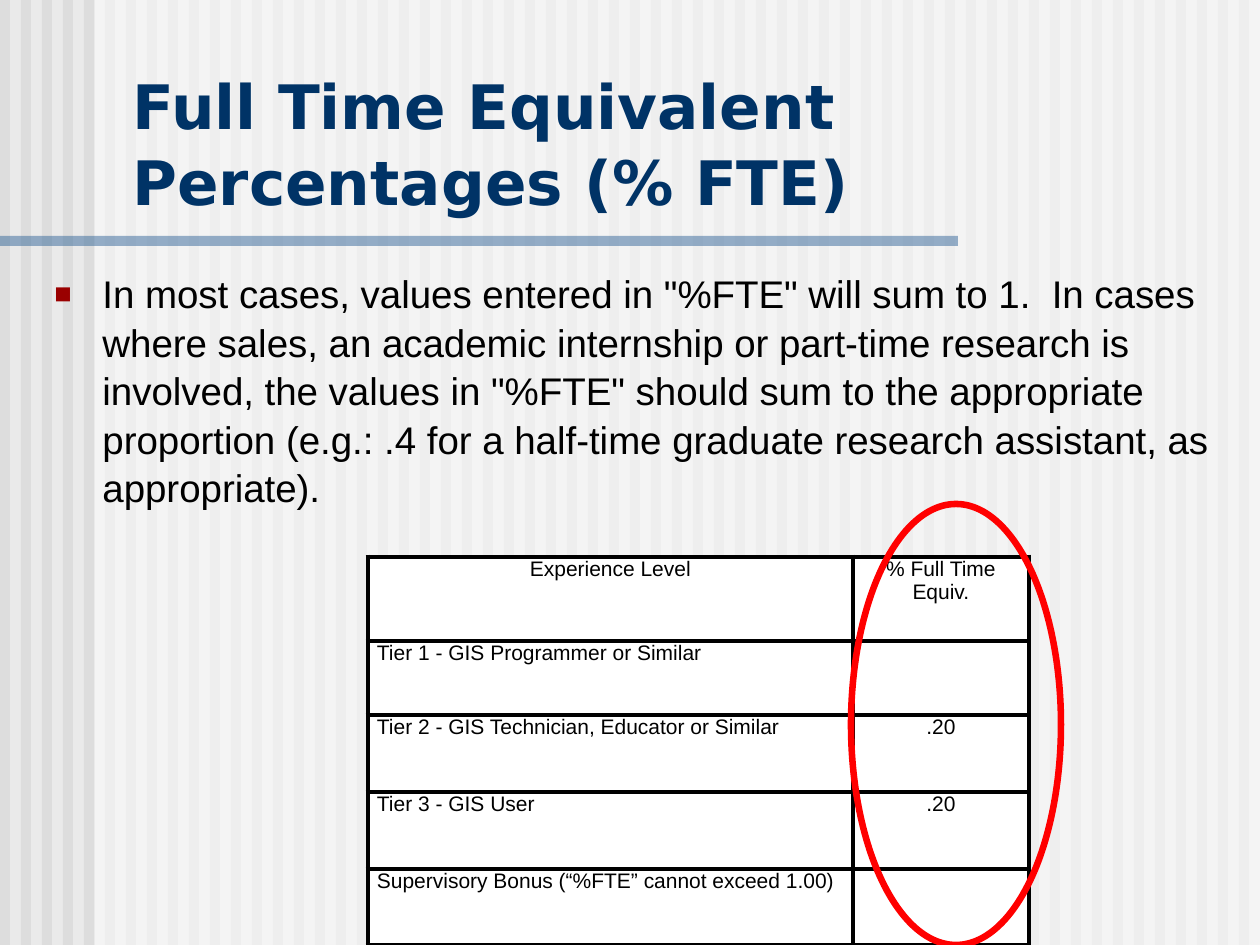
from dataclasses import dataclass

from lxml import etree
from pptx import Presentation
from pptx import util as u
from pptx.dml.color import RGBColor
from pptx.enum import shapes, text
from pptx.oxml import ns

SCALE = 914400 / 126


@dataclass(frozen=True)
class Theme:
    background: str = "EAEAEA"
    stripe: str = "DDDDDD"
    white: str = "FFFFFF"
    rule: str = "336699"
    title: str = "003366"
    ink: str = "000000"
    bullet: str = "9A0000"
    highlight: str = "FF0000"
    title_font: str = "DejaVu Sans"
    body_font: str = "Arial"
    title_size: int = 35
    body_size: int = 22
    table_size: int = 12


THEME = Theme()


def px(length):
    return u.Emu(round(length * SCALE))


def place(box):
    return [px(length) for length in box]


def add_element(parent, tag, **attributes):
    return etree.SubElement(parent, ns.qn(tag), attributes)


def add_bar(slide, box, color, opacity=100):
    shape = slide.shapes.add_shape(shapes.MSO_SHAPE.RECTANGLE, *place(box))
    shape.shadow.inherit = False
    shape.line.fill.background()
    shape.fill.solid()
    shape.fill.fore_color.rgb = RGBColor.from_string(color)
    if opacity < 100:
        color_element = shape.fill._xPr.find(".//" + ns.qn("a:srgbClr"))
        add_element(color_element, "a:alpha", val=str(opacity * 1000))


def add_run(paragraph, words, font, size, color, bold=False):
    run = paragraph.add_run()
    run.text = words
    run.font.name = font
    run.font.size = u.Pt(size)
    run.font.bold = bold
    run.font.color.rgb = RGBColor.from_string(color)


def add_text_frame(slide, box):
    frame = slide.shapes.add_textbox(*place(box)).text_frame
    frame.word_wrap = True
    return frame


def add_backdrop(slide, box):
    left, top, width, height = box
    slide.background.fill.solid()
    slide.background.fill.fore_color.rgb = RGBColor.from_string(THEME.background)
    pitch = 21
    for offset in range(0, width, pitch):
        add_bar(slide, (left + offset, top, 10, height), THEME.stripe)
    margin = 95
    add_bar(slide, (left + margin, top, width - margin, height), THEME.white, 50)
    add_bar(slide, (left, top + 236, 958, 10), THEME.rule, 50)


def add_title(slide, box, words):
    frame = add_text_frame(slide, box)
    frame.vertical_anchor = text.MSO_ANCHOR.BOTTOM
    paragraph = frame.paragraphs[0]
    paragraph.line_spacing = 1.04
    add_run(paragraph, words, THEME.title_font, THEME.title_size, THEME.title, True)


def add_body(slide, box, words):
    paragraph = add_text_frame(slide, box).paragraphs[0]
    paragraph.line_spacing = 1.05
    properties = paragraph._p.get_or_add_pPr()
    indent = px(48)
    properties.set("marL", str(indent))
    properties.set("indent", str(-indent))
    bullet_color = add_element(properties, "a:buClr")
    add_element(bullet_color, "a:srgbClr", val=THEME.bullet)
    add_element(properties, "a:buSzPct", val="75000")
    add_element(properties, "a:buFont", typeface=THEME.body_font)
    add_element(properties, "a:buChar", char="■")
    add_run(paragraph, words, THEME.body_font, THEME.body_size, THEME.ink)


def add_borders(cell):
    properties = cell._tc.get_or_add_tcPr()
    for position, side in enumerate(("a:lnL", "a:lnR", "a:lnT", "a:lnB")):
        line = etree.Element(ns.qn(side), w=str(u.Pt(3)))
        fill = add_element(line, "a:solidFill")
        add_element(fill, "a:srgbClr", val=THEME.ink)
        properties.insert(position, line)


def fill_cell(cell, words, centered):
    cell.margin_left = cell.margin_right = px(9)
    cell.margin_top = cell.margin_bottom = 0
    cell.fill.solid()
    cell.fill.fore_color.rgb = RGBColor.from_string(THEME.white)
    add_borders(cell)
    paragraph = cell.text_frame.paragraphs[0]
    if centered:
        paragraph.alignment = text.PP_ALIGN.CENTER
    if words:
        add_run(paragraph, words, THEME.body_font, THEME.table_size, THEME.ink)


def add_levels_table(slide, box, column_widths, row_heights, rows):
    frame = slide.shapes.add_table(len(rows), len(column_widths), *place(box))
    table = frame.table
    for column, width in zip(table.columns, column_widths):
        column.width = px(width)
    for row, height in zip(table.rows, row_heights):
        row.height = px(height)
    for row_index, row in enumerate(rows):
        for column_index, words in enumerate(row):
            centered = row_index == 0 or column_index == 1
            fill_cell(table.cell(row_index, column_index), words, centered)


def add_highlight(slide, box):
    shape = slide.shapes.add_shape(shapes.MSO_SHAPE.OVAL, *place(box))
    shape.shadow.inherit = False
    shape.fill.background()
    shape.line.color.rgb = RGBColor.from_string(THEME.highlight)
    shape.line.width = u.Pt(3.75)


def main():
    presentation = Presentation()
    presentation.slide_width = px(1260)
    presentation.slide_height = px(945)
    slide = presentation.slides.add_slide(presentation.slide_layouts[6])

    add_backdrop(slide, (0, 0, 1260, 945))
    add_body(
        slide,
        (42, 262, 1201, 577),
        'In most cases, values entered in "%FTE" will sum to 1.  In cases where '
        "sales, an academic internship or part-time research is involved, the "
        'values in "%FTE" should sum to the appropriate proportion (e.g.: .4 for '
        "a half-time graduate research assistant, as appropriate).",
    )
    add_title(slide, (120, 64, 1125, 160), "Full Time Equivalent Percentages (% FTE)")
    add_levels_table(
        slide,
        (368, 557, 661, 388),
        (485, 176),
        (84, 74, 77, 77, 76),
        (
            ("Experience Level", "% Full Time Equiv."),
            ("Tier 1 - GIS Programmer or Similar", ""),
            ("Tier 2 - GIS Technician, Educator or Similar", ".20"),
            ("Tier 3 - GIS User", ".20"),
            ("Supervisory Bonus (“%FTE” cannot exceed 1.00)", ""),
        ),
    )
    add_highlight(slide, (851, 504, 210, 441))
    presentation.save("out.pptx")


if __name__ == "__main__":
    main()
